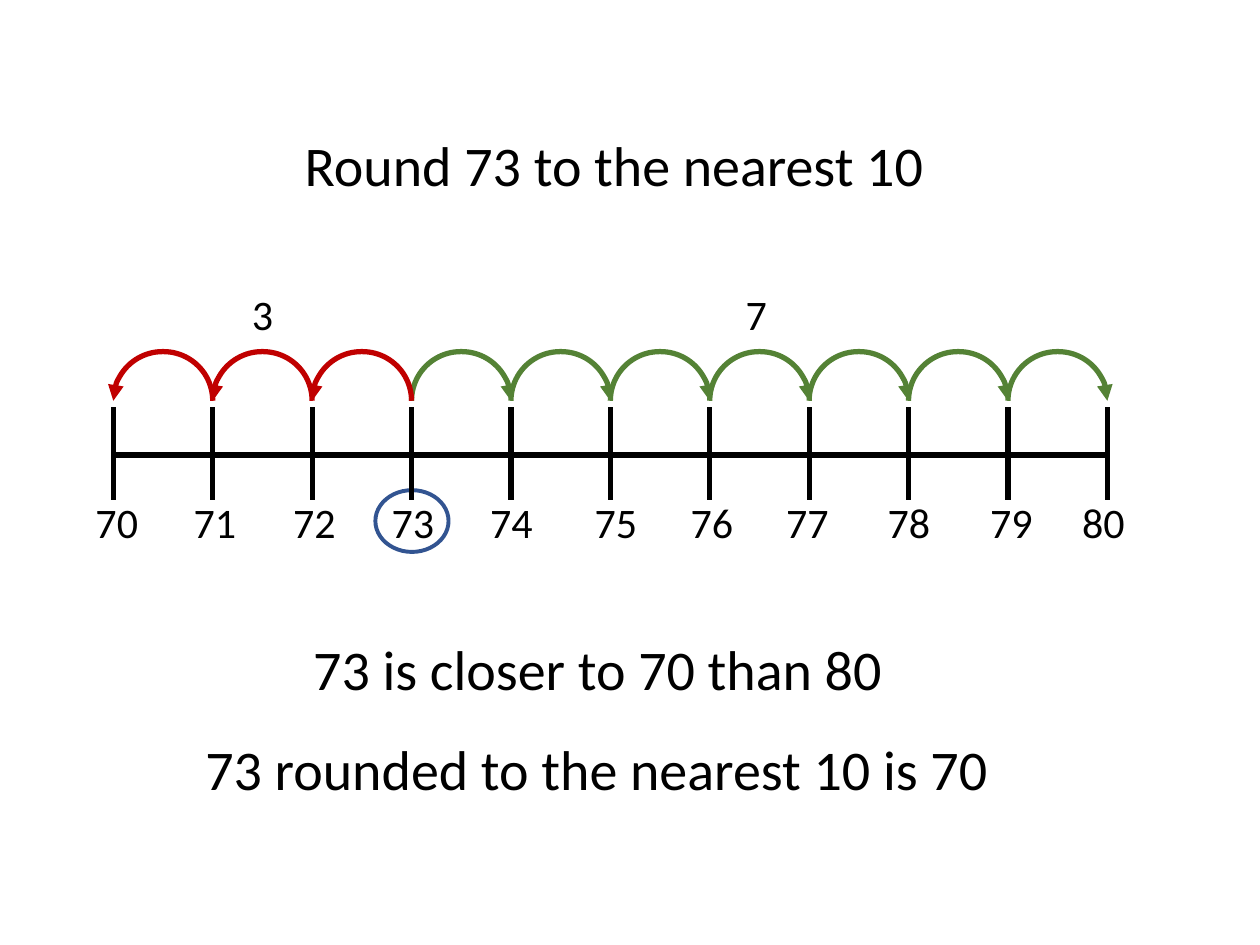
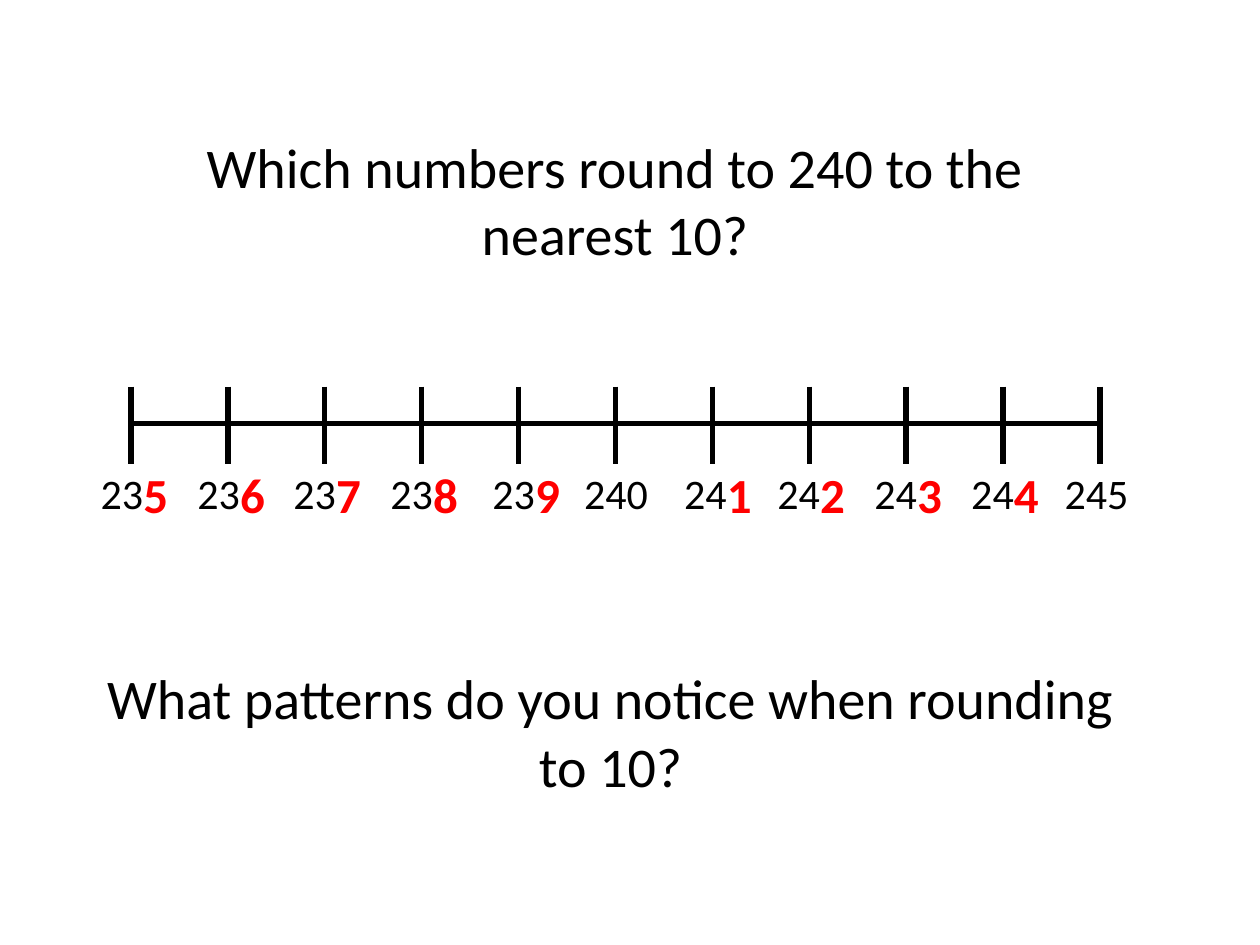
from lxml.etree import SubElement
from pptx import Presentation
from pptx.dml.color import RGBColor
from pptx.enum.shapes import MSO_CONNECTOR, MSO_SHAPE
from pptx.enum.text import MSO_ANCHOR, MSO_AUTO_SIZE, PP_ALIGN
from pptx.oxml.ns import qn
from pptx.util import Pt

FONT = "Calibri"
BLACK, WHITE, RED = "000000", "FFFFFF", "FF0000"
BLUE, GREEN, CRIMSON = "325491", "548235", "C00000"
STEPS = 10
LABEL = 64, 36
DIGIT = 18.7, 27.4


def paint(part, color):
    """Give a fill or a font a solid colour."""
    if hasattr(part, "solid"):
        part.solid()
        part = part.fore_color
    else:
        part = part.color
    part.rgb = RGBColor.from_string(color)


def stroke(shape, color, width):
    """Style the outline of a shape or line."""
    paint(shape.line.fill, color)
    shape.line.width = Pt(width)


def style(frame, text, size, color=BLACK, bold=False, align=PP_ALIGN.LEFT):
    """Write one styled paragraph into a text frame."""
    frame.word_wrap = True
    frame.text = text
    para = frame.paragraphs[0]
    para.alignment = align
    font = para.runs[0].font
    font.name, font.size, font.bold = FONT, Pt(size), bold
    paint(font, color)


def write(slide, box, text, size=24, align=PP_ALIGN.LEFT):
    """Add a text box."""
    frame = slide.shapes.add_textbox(*map(Pt, box)).text_frame
    style(frame, text, size, align=align)
    frame.auto_size = MSO_AUTO_SIZE.SHAPE_TO_FIT_TEXT


def title(slide, box, text):
    """Add a large centred sentence."""
    write(slide, box, text, 32, PP_ALIGN.CENTER)


def shape(slide, kind, box):
    """Add a preset shape without shadow or fill."""
    item = slide.shapes.add_shape(kind, *map(Pt, box))
    item.shadow.inherit = False
    item.fill.background()
    return item


def ruler(slide, box, drop):
    """Draw a number line with ticks across the box."""
    left, top, width, height = box
    group = slide.shapes.add_group_shape()
    ticks = [left + width * i / STEPS for i in range(STEPS + 1)]
    ends = [(left, top + drop, left + width, top + drop)]
    ends += [(x, top, x, top + height) for x in ticks]
    for end in ends:
        line = group.shapes.add_connector(MSO_CONNECTOR.STRAIGHT, *map(Pt, end))
        stroke(line, BLACK, 3)
        SubElement(line._element.spPr, qn("a:effectLst"))


def labels(slide, box, first, shifts):
    """Number the ticks and return the left edge of each label."""
    left, top, width, _ = box
    edges = [left + width * i / STEPS - shift for i, shift in enumerate(shifts)]
    for i, edge in enumerate(edges):
        write(slide, (edge, top, *LABEL), str(first + i))
    return edges


def digit(slide, box, text):
    """Cover a last digit with a bold red one."""
    card = shape(slide, MSO_SHAPE.RECTANGLE, box)
    paint(card.fill, WHITE)
    card.line.fill.background()
    frame = card.text_frame
    frame.margin_left = frame.margin_right = 0
    frame.margin_top = frame.margin_bottom = 0
    frame.vertical_anchor = MSO_ANCHOR.TOP
    style(frame, text, 28, RED, True)


def jumps(slide, box, count, color, back=False):
    """Fill the box with a row of curved arrows."""
    left, top, width, height = box
    step = width / count
    for i in range(count):
        mid = left + step * (i + 0.5)
        place = mid - height / 2, top + (height - step) / 2, height, step
        arc = shape(slide, MSO_SHAPE.RIGHT_BRACKET, place)
        arc.adjustments[0] = 1
        arc.rotation = 90 if back else 270
        if back:
            arc._element.spPr.find(qn("a:xfrm")).set("flipH", "1")
        stroke(arc, color, 3)
        SubElement(arc.line._get_or_add_ln(), qn("a:tailEnd"), type="triangle")


def closer(slide):
    """Build the slide that rounds 73."""
    left, top, width, height = box = 64.8, 232.6, 568, 53.4
    step = width / STEPS
    start = left + 3 * step
    title(slide, (36, 71.3, 630, 46), "Round 73 to the nearest 10")
    ring = shape(slide, MSO_SHAPE.OVAL, (start - 20.7, 280.1, 41.8, 35.3))
    stroke(ring, BLUE, 2.25)
    jumps(slide, (start, top - 31.7, 7 * step, 28.1), 7, GREEN)
    jumps(slide, (left, top - 31.7, 3 * step, 28.1), 3, CRIMSON, True)
    for edge, text in ((136.8, "3"), (419, "7")):
        write(slide, (edge, 161.3, *LABEL), text)
    title(slide, (26.6, 359.3, 630, 46), "73 is closer to 70 than 80")
    title(slide, (26, 416.2, 630, 46), "73 rounded to the nearest 10 is 70")
    shifts = 17.3, 18, 18, 18.5, 19, 16, 18, 20.3, 19, 17.3, 21.5
    labels(slide, (left, 280.1, width, 36), 70, shifts)
    ruler(slide, box, 27.4)


def pattern(slide):
    """Build the slide about numbers that round to 240."""
    left, top, width, height = box = 74.9, 221, 553.6, 44
    ruler(slide, box, 21)
    shifts = 24.5, 24.5, 25, 25, 22, 25, 23.2, 25.2, 25.2, 25.2, 27.2
    edges = labels(slide, (left, 263.5, width, 36), 235, shifts)
    title(slide, (74.9, 72, 553, 85),
          "Which numbers round to 240 to the nearest 10?")
    title(slide, (52.6, 375.8, 592.6, 85),
          "What patterns do you notice when rounding to 10?")
    for i, edge in enumerate(edges[:-1]):
        if i != 5:
            digit(slide, (edge + 31.5, 265.7, *DIGIT), str((235 + i) % 10))


def main():
    """Build and save the deck."""
    deck = Presentation()
    deck.slide_width, deck.slide_height = Pt(720), Pt(540)
    for build in (closer, pattern):
        build(deck.slides.add_slide(deck.slide_layouts[6]))
    deck.save("out.pptx")


if __name__ == "__main__":
    main()
